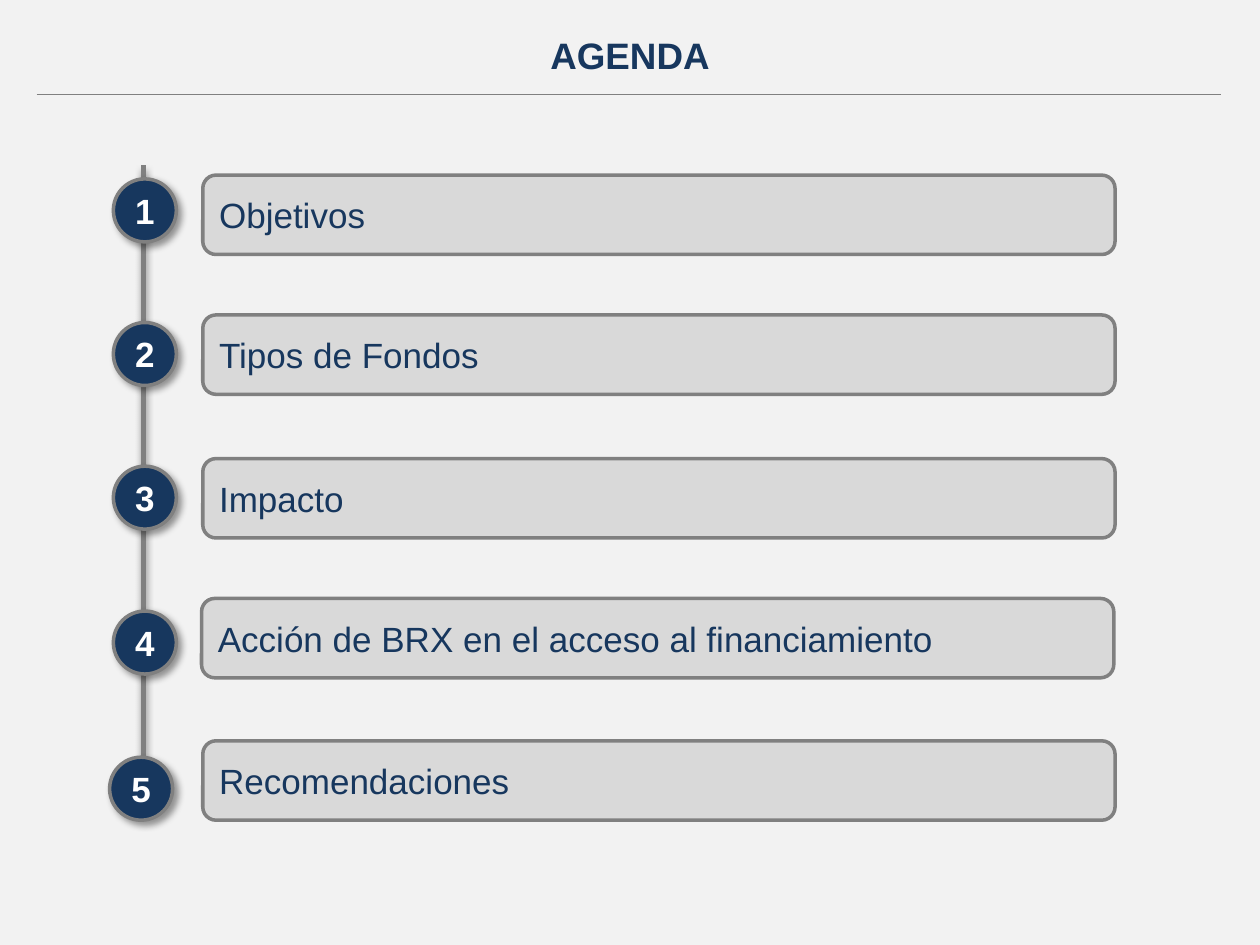
from lxml import etree
from pptx import Presentation
from pptx.dml.color import RGBColor
from pptx.enum.shapes import MSO_CONNECTOR, MSO_SHAPE
from pptx.enum.text import MSO_ANCHOR, PP_ALIGN
from pptx.oxml.ns import qn
from pptx.util import Inches, Pt

STRAIGHT = MSO_CONNECTOR.STRAIGHT
ROUNDED, OVAL = MSO_SHAPE.ROUNDED_RECTANGLE, MSO_SHAPE.OVAL
MIDDLE = MSO_ANCHOR.MIDDLE
LEFT, CENTER = PP_ALIGN.LEFT, PP_ALIGN.CENTER

NAVY, GRAY, SILVER = "17375E", "808080", "D9D9D9"
WHITE, BACKGROUND = "FFFFFF", "F2F2F2"

TITLE = "AGENDA"
TOPICS = [
    {"text": "Objetivos", "bar": (1.61, 1.39), "badge": (0.9, 1.42)},
    {"text": "Tipos de Fondos", "bar": (1.61, 2.5), "badge": (0.9, 2.56)},
    {"text": "Impacto", "bar": (1.61, 3.64), "badge": (0.9, 3.7)},
    {"text": "Acción de BRX en el acceso al financiamiento",
     "bar": (1.6, 4.75), "badge": (0.9, 4.85)},
    {"text": "Recomendaciones", "bar": (1.61, 5.88), "badge": (0.87, 6.01)},
]
BAR_SIZE = (7.24, 0.63)
BADGE_SIZE = (0.5, 0.5)


def color(value):
    return RGBColor.from_string(value)


def set_effects(shape, angle=None):
    properties = shape._element.spPr
    effects = properties.find(qn("a:effectLst"))
    if effects is None:
        effects = etree.SubElement(properties, qn("a:effectLst"))
    if angle is not None:
        shadow = etree.SubElement(
            effects, qn("a:outerShdw"), blurRad=str(Pt(4)), dist=str(Pt(3)),
            dir=str(angle * 60000), rotWithShape="0")
        tint = etree.SubElement(shadow, qn("a:srgbClr"), val="000000")
        etree.SubElement(tint, qn("a:alpha"), val="40000")


def write(shape, text, size, ink, align, bold=False, margin=0.1):
    frame = shape.text_frame
    settings = {"word_wrap": True, "vertical_anchor": MIDDLE,
                "margin_left": Inches(margin), "margin_right": Inches(margin),
                "margin_top": Inches(0.05), "margin_bottom": Inches(0.05)}
    for name, value in settings.items():
        setattr(frame, name, value)
    para = frame.paragraphs[0]
    para.alignment = align
    span = para.add_run()
    span.text = text
    for name, value in {"name": "Arial", "size": Pt(size), "bold": bold}.items():
        setattr(span.font, name, value)
    span.font.color.rgb = color(ink)


def add_line(page, start, end, width, angle=None):
    line = page.shapes.add_connector(STRAIGHT, *map(Inches, start + end))
    line.line.color.rgb = color(GRAY)
    line.line.width = Pt(width)
    set_effects(line, angle)


def add_box(page, kind, position, size, fill):
    box = page.shapes.add_shape(kind, *map(Inches, position + size))
    box.shadow.inherit = False
    box.fill.solid()
    box.fill.fore_color.rgb = color(fill)
    box.line.color.rgb = color(GRAY)
    box.line.width = Pt(2)
    return box


def main():
    deck = Presentation()
    deck.slide_width, deck.slide_height = Inches(10), Inches(7.5)
    page = deck.slides.add_slide(deck.slide_layouts[5])
    page.background.fill.solid()
    page.background.fill.fore_color.rgb = color(BACKGROUND)

    title = page.shapes.title
    title.left, title.top, title.width, title.height = map(
        Inches, (0, 0.21, 10, 0.45))
    write(title, TITLE, 21, NAVY, CENTER, bold=True)

    add_line(page, (0.29, 0.75), (9.69, 0.75), 0.75)
    add_line(page, (1.14, 1.31), (1.14, 6.19), 3, angle=90)

    for number, topic in enumerate(TOPICS, 1):
        bar = add_box(page, ROUNDED, topic["bar"], BAR_SIZE, SILVER)
        write(bar, topic["text"], 20, NAVY, LEFT)
        badge = add_box(page, OVAL, topic["badge"], BADGE_SIZE, NAVY)
        set_effects(badge, angle=45)
        write(badge, str(number), 20, WHITE, CENTER, bold=True, margin=0)

    deck.save("out.pptx")


if __name__ == "__main__":
    main()
